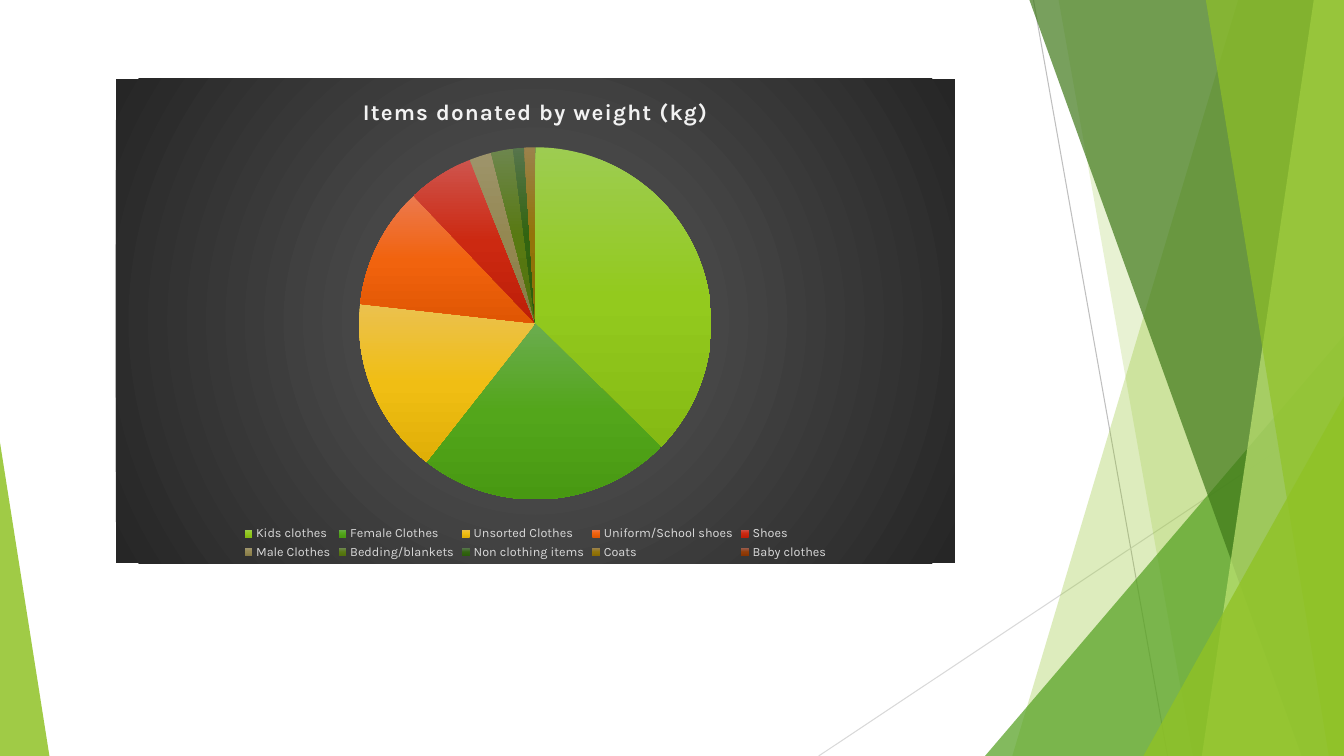
"""Build a slide with a pie chart of donated items beside green facets."""
from dataclasses import dataclass

from lxml import etree
from pptx import Presentation
from pptx import util as u
from pptx.chart.data import CategoryChartData
from pptx.dml.color import RGBColor
from pptx.enum import chart as chart_enum
from pptx.enum import shapes
from pptx.oxml import ns

WIDTH, HEIGHT = 13.33, 7.5
FONT = "Karla"
GREEN = "90C226"


@dataclass(frozen=True)
class Line:
    start: tuple[float, float]
    end: tuple[float, float]
    color: str


@dataclass(frozen=True)
class Facet:
    """A band that runs from two points on the top edge to two on the bottom."""
    top_left: float
    bottom_left: float
    color: str
    opacity: int


@dataclass(frozen=True)
class Triangle:
    left: float
    top: float
    width: float
    apex: float
    color: str
    opacity: int


@dataclass(frozen=True)
class Slice:
    label: str
    weight: int
    colors: tuple[str, str, str]


DECORATIONS = [
    Line((10.25, 0), (11.58, HEIGHT), "BFBFBF"),
    Line((WIDTH, 4.03), (8.12, HEIGHT), "D9D9D9"),
    Facet(12.28, 10.04, GREEN, 30),
    Facet(10.5, 11.83, GREEN, 20),
    Triangle(9.77, 3.33, 3.56, 1, "54A021", 72),
    Facet(10.21, 12.91, "3F7819", 70),
    Facet(13.03, 11.92, "C0E474", 70),
    Facet(11.96, 13.18, GREEN, 65),
    Triangle(11.34, 3.93, 1.99, 1, GREEN, 80),
    Triangle(0, 4.39, 0.49, 0, GREEN, 85),
]

SLICES = [
    Slice("Kids clothes", 37, ("9DCC51", "93CA1E", "85BA14")),
    Slice("Female Clothes", 23, ("6BAC4F", "53A61B", "489912")),
    Slice("Unsorted Clothes", 16, ("EBC14F", "F0BE14", "E0AF07")),
    Slice("Uniform/School shoes", 11, ("EC794E", "F1630E", "E05603")),
    Slice("Shoes", 6, ("CE544D", "CC2911", "BD1E08")),
    Slice("Male Clothes", 2, ("9E946B", "948852", "867A46")),
    Slice("Bedding/blankets", 2, ("6D864D", "587912", "50700C")),
    Slice("Non clothing items", 1, ("57754C", "326410", "2B5C0B")),
    Slice("Coats", 1, ("9B824C", "937409", "886A03")),
    Slice("Baby clothes", 0, ("995C4C", "913C08", "863402")),
]


def rgb(value: str) -> RGBColor:
    """Turn a hex string into a colour."""
    return RGBColor.from_string(value)


def child(parent, tag: str, **attributes):
    """Append an XML element such as a:lin to its parent."""
    element = etree.SubElement(parent, ns.qn(tag))
    for name, value in attributes.items():
        element.set(name, str(value))
    return element


def paint(shape, color: str, opacity: int) -> None:
    """Give a shape a translucent fill and no outline or shadow."""
    shape.shadow.inherit = False
    shape.line.fill.background()
    shape.fill.solid()
    shape.fill.fore_color.rgb = rgb(color)
    color_element = shape._element.spPr.find(".//" + ns.qn("a:srgbClr"))
    child(color_element, "a:alpha", val=opacity * 1000)


def add_line(slide, line: Line) -> None:
    """Draw a thin straight line."""
    points = [u.Inches(value) for value in line.start + line.end]
    connector = slide.shapes.add_connector(shapes.MSO_CONNECTOR.STRAIGHT, *points)
    connector.line.color.rgb = rgb(line.color)
    connector.line.width = u.Pt(0.75)
    child(connector._element.spPr, "a:effectLst")


def add_facet(slide, facet: Facet) -> None:
    """Draw a full-height facet that reaches the right edge."""
    corners = [(facet.top_left, 0), (WIDTH, 0), (WIDTH, HEIGHT), (facet.bottom_left, HEIGHT)]
    points = [(u.Inches(x), u.Inches(y)) for x, y in corners]
    builder = slide.shapes.build_freeform(*points[0])
    builder.add_line_segments(points[1:], close=True)
    paint(builder.convert_to_shape(), facet.color, facet.opacity)


def add_triangle(slide, triangle: Triangle) -> None:
    """Draw a right-angled triangle that stands on the bottom edge."""
    shape = slide.shapes.add_shape(
        shapes.MSO_SHAPE.ISOSCELES_TRIANGLE,
        u.Inches(triangle.left), u.Inches(triangle.top),
        u.Inches(triangle.width), u.Inches(HEIGHT - triangle.top))
    shape.adjustments[0] = triangle.apex
    paint(shape, triangle.color, triangle.opacity)


def add_gradient(properties, colors: tuple[str, ...], radial: bool = False) -> None:
    """Append an evenly spaced gradient and no outline to chart properties."""
    gradient = child(properties, "a:gradFill", rotWithShape=1)
    stops = child(gradient, "a:gsLst")
    for index, color in enumerate(colors):
        stop = child(stops, "a:gs", pos=100000 * index // (len(colors) - 1))
        child(stop, "a:srgbClr", val=color)
    if radial:
        circle = child(gradient, "a:path", path="circle")
        child(circle, "a:fillToRect", l=50000, t=50000, r=50000, b=50000)
    else:
        child(gradient, "a:lin", ang=5400000, scaled=0)
    child(child(properties, "a:ln"), "a:noFill")


def format_font(font, size: float, color: str) -> None:
    """Set the typeface, size and colour of a font."""
    font.name, font.size, font.color.rgb = FONT, u.Pt(size), rgb(color)


def place_plot(chart, **fractions: float) -> None:
    """Fix the inner plot area as fractions of the chart."""
    plot_area = chart._chartSpace.chart.plotArea
    layout = plot_area.find(ns.qn("c:layout"))
    if layout is None:
        layout = etree.Element(ns.qn("c:layout"))
        plot_area.insert(0, layout)
    manual = child(layout, "c:manualLayout")
    child(manual, "c:layoutTarget", val="inner")
    child(manual, "c:xMode", val="edge")
    child(manual, "c:yMode", val="edge")
    for name, value in fractions.items():
        child(manual, f"c:{name}", val=value)


def add_donation_chart(slide) -> None:
    """Draw the pie chart on its dark panel."""
    data = CategoryChartData()
    data.categories = [item.label for item in SLICES]
    data.add_series("Series 1", [item.weight for item in SLICES])
    chart = slide.shapes.add_chart(
        chart_enum.XL_CHART_TYPE.PIE, u.Inches(1.15), u.Inches(0.78),
        u.Inches(8.32), u.Inches(4.81), data).chart
    format_font(chart.font, 10, "000000")
    panel = etree.Element(ns.qn("c:spPr"))
    add_gradient(panel, ("595959", "262626"), radial=True)
    chart._chartSpace.find(ns.qn("c:txPr")).addprevious(panel)

    chart.has_title = True
    title = chart.chart_title
    title.include_in_layout = False
    title.text_frame.text = "Items donated by weight (kg)"
    run = title.text_frame.paragraphs[0].runs[0]
    format_font(run.font, 16, "F2F2F2")
    run.font.bold = True
    run._r.get_or_add_rPr().set("spc", "100")

    chart.has_legend = True
    chart.legend.position = chart_enum.XL_LEGEND_POSITION.BOTTOM
    chart.legend.include_in_layout = False
    format_font(chart.legend.font, 9, "D9D9D9")
    place_plot(chart, x=0.29, y=0.14, w=0.42, h=0.73)

    chart.plots[0].vary_by_categories = True
    series = chart.plots[0].series[0]
    for index, item in enumerate(SLICES):
        point = series._element.get_or_add_dPt_for_point(index)
        add_gradient(point.get_or_add_spPr(), item.colors)


def main() -> None:
    """Build and save the presentation."""
    presentation = Presentation()
    presentation.slide_width = u.Inches(WIDTH)
    presentation.slide_height = u.Inches(HEIGHT)
    slide = presentation.slides.add_slide(presentation.slide_layouts[6])
    painters = {Line: add_line, Facet: add_facet, Triangle: add_triangle}
    for decoration in DECORATIONS:
        painters[type(decoration)](slide, decoration)
    add_donation_chart(slide)
    presentation.save("out.pptx")


if __name__ == "__main__":
    main()
